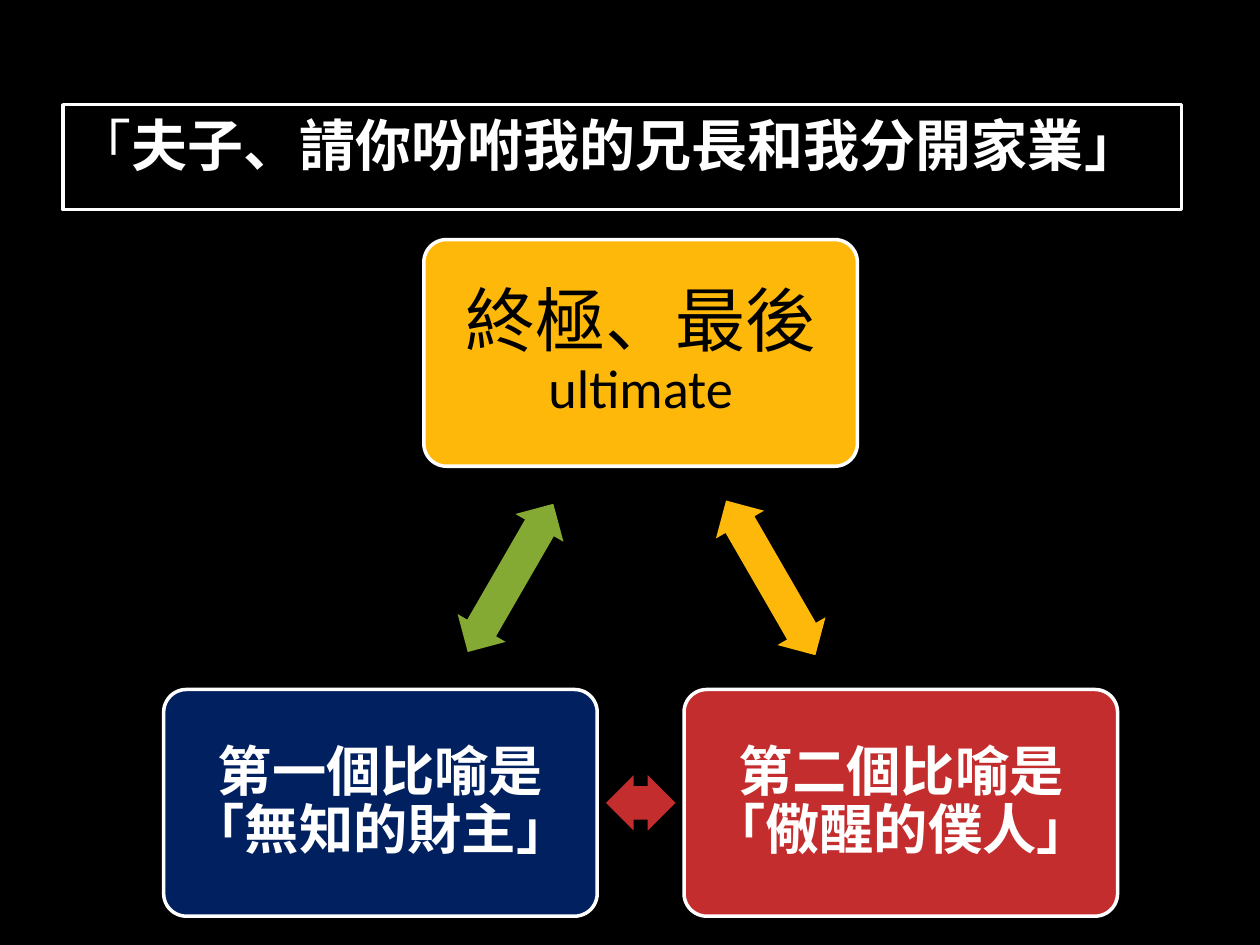
from pptx import Presentation
from pptx.dml.color import RGBColor as RGB
from pptx.enum.shapes import MSO_SHAPE as Kind
from pptx.enum.text import MSO_ANCHOR as Anchor, MSO_AUTO_SIZE as Fit, PP_ALIGN as Align
from pptx.util import Cm, Pt

COLORS = {
    "black": "000000", "white": "FFFFFF", "gold": "FEB80A",
    "red": "C32D2E", "navy": "002060", "green": "84AA33",
}


def color(name):
    return RGB.from_string(COLORS[name])


def paint(shape, fill, line=None):
    shape.fill.solid()
    shape.fill.fore_color.rgb = color(fill)
    if line:
        shape.line.color.rgb = color(line)
        shape.line.width = Pt(2)
    else:
        shape.line.fill.background()
    shape.shadow.inherit = False


def add_runs(para, runs):
    for text, size, font, tint, bold in runs:
        run = para.add_run()
        run.text = text
        run.font.size = Pt(size)
        run.font.name = font
        run.font.bold = bold
        run.font.color.rgb = color(tint)


def set_title(slide, left, top, width, height):
    title = slide.shapes.title
    title.left, title.top = Cm(left), Cm(top)
    title.width, title.height = Cm(width), Cm(height)
    paint(title, "black", "white")
    frame = title.text_frame
    frame.word_wrap = False
    frame.auto_size = Fit.SHAPE_TO_FIT_TEXT
    frame.vertical_anchor = Anchor.TOP
    para = frame.paragraphs[0]
    para.alignment = Align.LEFT
    add_runs(para, [
        ("「", 32, "Calibri", "white", False),
        ("夫子、請你吩咐我的兄長和我分開家業」", 32, "Calibri", "white", True),
    ])


def add_node(slide, mid, size, fill, inset, runs):
    (x, y), (w, h) = mid, size
    node = slide.shapes.add_shape(
        Kind.ROUNDED_RECTANGLE, Cm(x - w / 2), Cm(y - h / 2), Cm(w), Cm(h))
    node.adjustments[0] = 0.1
    paint(node, fill, "white")
    frame = node.text_frame
    frame.word_wrap = True
    frame.vertical_anchor = Anchor.MIDDLE
    frame.margin_left = frame.margin_right = Cm(inset)
    frame.margin_top = frame.margin_bottom = Cm(inset)
    para = frame.paragraphs[0]
    para.alignment = Align.CENTER
    para.line_spacing = 0.9
    para.space_after = Pt(11)
    add_runs(para, runs)


def add_arrow(slide, start, end, length, turn, fill):
    # Centred halfway between two nodes
    thick = 1.12
    x, y = ((a + b) / 2 for a, b in zip(start, end))
    arrow = slide.shapes.add_shape(
        Kind.LEFT_RIGHT_ARROW, Cm(x - length / 2), Cm(y - thick / 2),
        Cm(length), Cm(thick))
    arrow.adjustments[0], arrow.adjustments[1] = 0.6, 0.5
    arrow.rotation = turn
    paint(arrow, fill)


def add_cycle(slide, left, top, width, height):
    size = w, h = 8.74, 4.57
    low = top + height - h / 2
    peak = (left + width / 2, top + h / 2)
    first = (left + w / 2, low)
    second = (left + width - w / 2, low)

    # Nodes
    add_node(slide, peak, size, "gold", 0.43, [
        ("終極、最後", 40, "Arial", "black", False),
        ("ultimate", 31, "Calibri", "black", False),
    ])
    for mid, fill, text in (
        (second, "red", "第二個比喻是「儆醒的僕人」"),
        (first, "navy", "第一個比喻是「無知的財主」"),
    ):
        add_node(slide, mid, size, fill, 0.33,
                 [(text, 31, "Calibri", "white", True)])

    # Arrows between them
    add_arrow(slide, peak, second, 3.6, 60, "gold")
    add_arrow(slide, second, first, 1.4, 180, "red")
    add_arrow(slide, first, peak, 3.45, 300, "green")


def main():
    deck = Presentation()
    deck.slide_width, deck.slide_height = Cm(25.4), Cm(19.05)
    slide = deck.slides.add_slide(deck.slide_layouts[5])
    slide.background.fill.solid()
    slide.background.fill.fore_color.rgb = color("black")
    set_title(slide, 1.27, 2.11, 22.55, 1.62)
    add_cycle(slide, 3.3, 4.83, 19.23, 13.64)
    deck.save("out.pptx")


if __name__ == "__main__":
    main()
